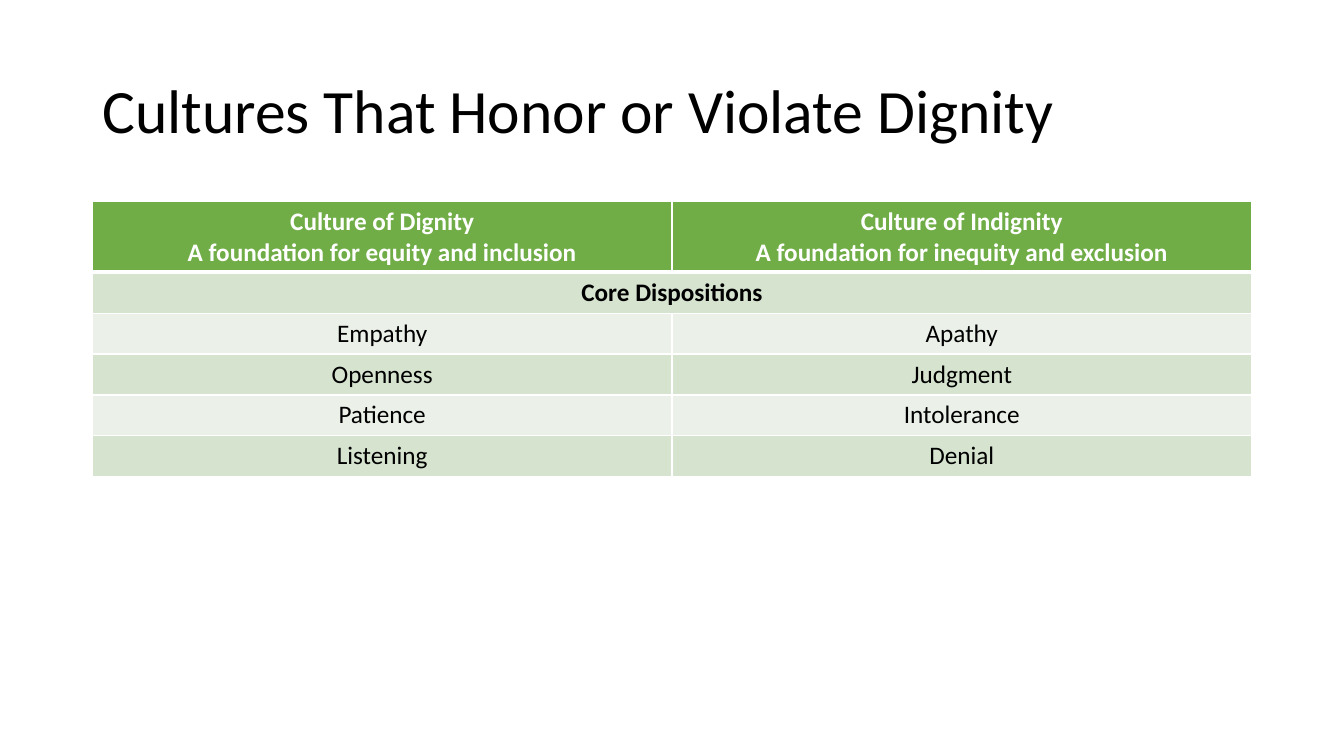
from dataclasses import dataclass

from lxml.etree import SubElement
from pptx import Presentation
from pptx.dml.color import RGBColor as Color
from pptx.enum.text import MSO_ANCHOR as Anchor, PP_ALIGN as Align
from pptx.oxml.ns import qn
from pptx.util import Pt


@dataclass(frozen=True)
class Theme:
    """Colours, font and sizes of the slide."""
    font: str = "Calibri"
    title_size: float = 44
    table_size: float = 18
    text: str = "000000"
    white: str = "FFFFFF"
    header: str = "70AD47"
    bands: tuple = ("D5E3CF", "EBF1E9")
    thin_line: float = 1
    thick_line: float = 3


THEME = Theme()
LEFT, WIDTH = 66, 828
HEADER_HEIGHT, ROW_HEIGHT = 50.4, 29.25
ROWS = [
    ("Culture of Dignity\nA foundation for equity and inclusion",
     "Culture of Indignity\nA foundation for inequity and exclusion"),
    ("Core Dispositions",),
    ("Empathy", "Apathy"),
    ("Openness", "Judgment"),
    ("Patience", "Intolerance"),
    ("Listening", "Denial"),
]


def write_text(frame, text, *, size, color=THEME.text, bold=False,
               align=Align.LEFT, line_spacing=1.0):
    """Write one paragraph per line of text in the given format."""
    frame.text = text
    for paragraph in frame.paragraphs:
        paragraph.alignment = align
        paragraph.line_spacing = line_spacing
        font = paragraph.runs[0].font
        font.name, font.size, font.bold = THEME.font, Pt(size), bold
        font.color.rgb = Color.from_string(color)


def add_title(slide, text):
    """Add the title, centred vertically in its box."""
    frame = slide.shapes.add_textbox(Pt(LEFT), Pt(28.75), Pt(WIDTH), Pt(104.4)).text_frame
    frame.word_wrap = True
    frame.vertical_anchor = Anchor.MIDDLE
    write_text(frame, text, size=THEME.title_size, line_spacing=0.9)


def set_borders(cell, **widths):
    """Draw white cell borders, with widths given by side."""
    properties = cell._tc.get_or_add_tcPr()
    for side in "LRTB":
        width = Pt(widths.get(side, THEME.thin_line))
        line = SubElement(properties, qn(f"a:ln{side}"), w=str(width))
        fill = SubElement(line, qn("a:solidFill"))
        SubElement(fill, qn("a:srgbClr"), val=THEME.white)


def style_cell(cell, row):
    """Give a cell the borders and fill of its row."""
    thick_sides = {0: {"B": THEME.thick_line}, 1: {"T": THEME.thick_line}}
    set_borders(cell, **thick_sides.get(row, {}))
    cell.fill.solid()
    color = THEME.bands[(row - 1) % 2] if row else THEME.header
    cell.fill.fore_color.rgb = Color.from_string(color)


def add_comparison_table(slide, rows):
    """Add the two-column table; a row with one text spans both columns."""
    height = HEADER_HEIGHT + ROW_HEIGHT * (len(rows) - 1)
    table = slide.shapes.add_table(
        len(rows), 2, Pt(LEFT), Pt(144), Pt(WIDTH), Pt(height)).table
    for index, texts in enumerate(rows):
        table.rows[index].height = Pt(ROW_HEIGHT if index else HEADER_HEIGHT)
        for cell in table.rows[index].cells:
            style_cell(cell, index)
        is_section = len(texts) == 1
        if is_section:
            table.cell(index, 0).merge(table.cell(index, 1))
        for column, text in enumerate(texts):
            write_text(table.cell(index, column).text_frame, text,
                       size=THEME.table_size, align=Align.CENTER,
                       color=THEME.text if index else THEME.white,
                       bold=index == 0 or is_section)


def main():
    """Build and save the slide."""
    presentation = Presentation()
    presentation.slide_width, presentation.slide_height = Pt(960), Pt(540)
    slide = presentation.slides.add_slide(presentation.slide_layouts[6])
    add_title(slide, "Cultures That Honor or Violate Dignity")
    add_comparison_table(slide, ROWS)
    presentation.save("out.pptx")


if __name__ == "__main__":
    main()
